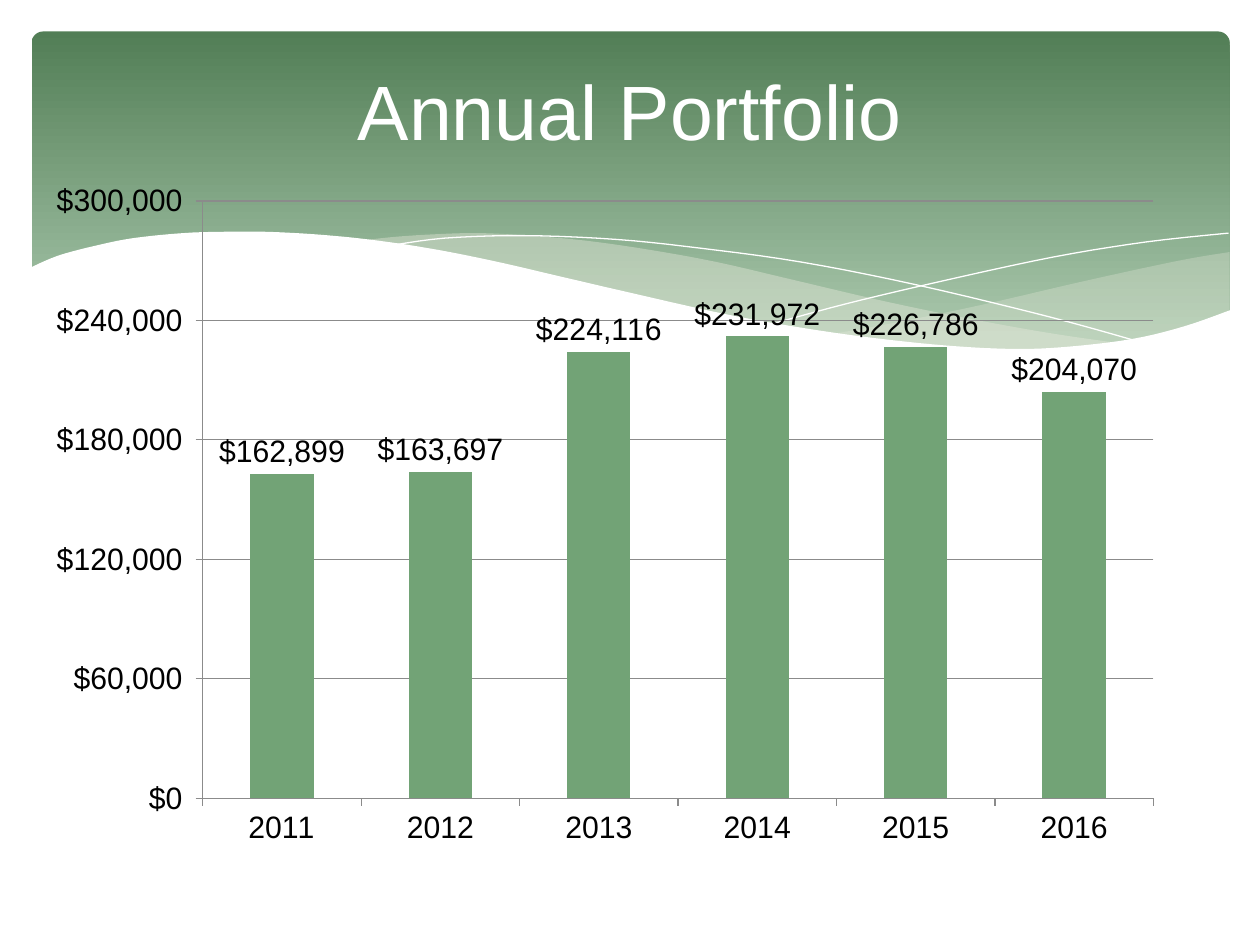
from dataclasses import dataclass, field

from lxml import etree
from pptx import Presentation
from pptx import util as u
from pptx.chart.data import CategoryChartData
from pptx.dml.color import RGBColor
from pptx.enum import chart as charts
from pptx.enum import shapes, text
from pptx.oxml.ns import qn

COLORS = {"white": "FFFFFF", "black": "000000", "dark": "527E56", "light": "AAC8AD",
          "mist": "EAEBDE", "bar": "72A376", "grid": "8B8B8B"}
PORTFOLIO = {"2011": 162899, "2012": 163697, "2013": 224116,
             "2014": 231972, "2015": 226786, "2016": 204070}

RIGHT_TOP = [(9.76, 2), (9.35, 2.07), (8.61, 2.23), (7.79, 2.42), (7.06, 2.57), (6.61, 2.65)]
RIGHT_BOTTOM = [(6.61, 2.65), (7.05, 2.71), (7.57, 2.76), (8.03, 2.78), (8.54, 2.76),
                (8.97, 2.7), (9.35, 2.62), (9.76, 2.47)]
MIDDLE_TOP = [(8.93, 2.73), (8.37, 2.65), (7.75, 2.54), (7.06, 2.4), (6.29, 2.22),
              (5.69, 2.08), (5.14, 1.98), (4.65, 1.91), (4.2, 1.87), (3.8, 1.85),
              (3.44, 1.86), (3.13, 1.88), (2.86, 1.91)]
MIDDLE_BOTTOM = [(2.86, 1.91), (3.42, 1.99), (4.04, 2.11), (4.91, 2.32), (5.66, 2.48),
                 (6.34, 2.61), (6.95, 2.7), (7.48, 2.76), (7.96, 2.78), (8.48, 2.77), (8.93, 2.73)]
FALLING_LINE = [(3.09, 1.95), (3.53, 1.89), (4.16, 1.87), (4.89, 1.9), (5.56, 1.97),
                (6.36, 2.08), (7.27, 2.26), (8.31, 2.51), (9.07, 2.72)]
RISING_LINE = [(6.13, 2.57), (6.72, 2.41), (7.48, 2.23), (8.36, 2.04), (9.1, 1.92), (9.75, 1.85)]
WHITE_EDGE = [(9.77, 2.46), (9.4, 2.59), (8.99, 2.69), (8.5, 2.75), (8.09, 2.77), (7.61, 2.75),
              (7.08, 2.7), (6.48, 2.62), (5.79, 2.5), (5.03, 2.33), (4.47, 2.2), (3.91, 2.07),
              (3.4, 1.97), (2.92, 1.9), (2.5, 1.86), (2.11, 1.84), (1.77, 1.84), (1.46, 1.85),
              (1.06, 1.89), (0.76, 1.95), (0.46, 2.03), (0.23, 2.13)]


def color(name):
    """Return the named colour."""
    return RGBColor.from_string(COLORS[name])


def smooth(knots, steps=5):
    """Return points on a Catmull-Rom curve through the knots."""
    padded = [knots[0], *knots, knots[-1]]
    points = [knots[0]]
    for a, b, c, d in zip(padded, padded[1:], padded[2:], padded[3:]):
        for step in range(1, steps + 1):
            t = step / steps
            points.append(tuple(
                (2 * q + (r - p) * t + (2 * p - 5 * q + 4 * r - s) * t ** 2
                 + (3 * q - p - 3 * r + s) * t ** 3) / 2
                for p, q, r, s in zip(a, b, c, d)))
    return points


@dataclass
class SlideBuilder:
    """Hold the style and the current slide."""
    page: object
    font: str = "Arial"
    sizes: dict = field(default_factory=lambda: {"title": 44, "chart": 18})

    def banner(self, left, top, width, height):
        """Add the rounded gradient banner."""
        box = self.page.shapes.add_shape(
            shapes.MSO_SHAPE.ROUNDED_RECTANGLE, *map(u.Inches, (left, top, width, height)))
        box.adjustments[0] = 0.034
        box.shadow.inherit = False
        box.line.fill.background()
        box.fill.gradient()
        box.fill.gradient_angle = 270
        for stop, name, position in zip(box.fill.gradient_stops, ("dark", "light"), (0, 0.9)):
            stop.color.rgb = color(name)
            stop.position = position

    def outline(self, points, close):
        """Add a freeform through points given in inches."""
        start, *rest = [(u.Inches(x), u.Inches(y)) for x, y in points]
        builder = self.page.shapes.build_freeform(*start)
        builder.add_line_segments(rest, close=close)
        shape = builder.convert_to_shape()
        shape.shadow.inherit = False
        return shape

    def wave(self, points, fill, opacity=100):
        """Add a filled wave."""
        shape = self.outline(points, True)
        shape.line.fill.background()
        shape.fill.solid()
        shape.fill.fore_color.rgb = color(fill)
        if opacity < 100:
            tint = shape.fill._xPr.find(".//" + qn("a:srgbClr"))
            etree.SubElement(tint, qn("a:alpha")).set("val", str(opacity * 1000))

    def curve(self, points):
        """Add a white hairline curve."""
        shape = self.outline(points, False)
        shape.fill.background()
        shape.line.color.rgb = color("white")
        shape.line.width = u.Pt(0)

    def title(self, words, left, top, width, height):
        """Add the centred slide title."""
        box = self.page.shapes.add_textbox(*map(u.Inches, (left, top, width, height)))
        frame = box.text_frame
        frame.word_wrap = True
        frame.vertical_anchor = text.MSO_ANCHOR.MIDDLE
        para = frame.paragraphs[0]
        para.alignment = text.PP_ALIGN.CENTER
        span = para.add_run()
        span.text = words
        self.style(span.font, "title", "white")

    def style(self, font, size, ink):
        """Apply the slide's typeface to a font."""
        font.name = self.font
        font.size = u.Pt(self.sizes[size])
        font.color.rgb = color(ink)

    def columns(self, name, values, left, top, width, height):
        """Add the column chart."""
        data = CategoryChartData()
        data.categories = list(values)
        data.add_series(name, list(values.values()))
        chart = self.page.shapes.add_chart(
            charts.XL_CHART_TYPE.COLUMN_CLUSTERED,
            *map(u.Inches, (left, top, width, height)), data).chart
        chart.has_title = False
        chart.has_legend = False
        self.style(chart.font, "chart", "black")
        plot = chart.plots[0]
        plot.gap_width = 150
        plot.vary_by_categories = False
        fill = plot.series[0].format.fill
        fill.solid()
        fill.fore_color.rgb = color("bar")

        plot.has_data_labels = True
        labels = plot.data_labels
        labels.show_value = True
        labels.position = charts.XL_LABEL_POSITION.OUTSIDE_END
        labels.number_format = '"$"#,##0'
        labels.number_format_is_linked = False
        self.style(labels.font, "chart", "black")

        scale = chart.value_axis
        scale.minimum_scale, scale.maximum_scale, scale.major_unit = 0, 300000, 60000
        scale.has_major_gridlines = True
        scale.tick_labels.number_format = '"$"#,##0" ";\\("$"#,##0\\)'
        scale.tick_labels.number_format_is_linked = False
        chart.category_axis.tick_label_position = charts.XL_TICK_LABEL_POSITION.LOW
        for axis in (scale, chart.category_axis):
            axis.major_tick_mark = charts.XL_TICK_MARK.OUTSIDE
            self.style(axis.tick_labels.font, "chart", "black")
        for part in (scale, chart.category_axis, scale.major_gridlines):
            part.format.line.color.rgb = color("grid")
            part.format.line.width = u.Pt(0.75)
        self.place_plot(chart, x=0.094, y=0.028, w=0.903, h=0.914)

    def place_plot(self, chart, **fractions):
        """Fix the inner plot area as fractions of the chart."""
        area = chart._chartSpace.find(".//" + qn("c:plotArea"))
        for old in area.findall(qn("c:layout")):
            area.remove(old)
        layout = etree.Element(qn("c:layout"))
        area.insert(0, layout)
        manual = etree.SubElement(layout, qn("c:manualLayout"))
        settings = {"layoutTarget": "inner", "xMode": "edge", "yMode": "edge", **fractions}
        for tag, value in settings.items():
            etree.SubElement(manual, qn("c:" + tag)).set("val", str(value))


def main():
    """Build and save the slide."""
    deck = Presentation()
    deck.slide_width, deck.slide_height = u.Inches(10), u.Inches(7.5)
    slide = SlideBuilder(deck.slides.add_slide(deck.slide_layouts[6]))
    slide.banner(0.25, 0.25, 9.51, 2.7)
    slide.wave(smooth(RIGHT_TOP) + smooth(RIGHT_BOTTOM), "mist", 29)
    slide.wave(smooth(MIDDLE_TOP) + smooth(MIDDLE_BOTTOM), "mist", 40)
    slide.curve(smooth(FALLING_LINE))
    slide.curve(smooth(RISING_LINE))
    slide.wave(smooth(WHITE_EDGE) + [(0.23, 3.29), (9.77, 3.29)], "white")
    slide.title("Annual Portfolio", 0.75, 0.33, 8.5, 1.08)
    slide.columns("Portfolio", PORTFOLIO, 0.45, 1.45, 8.73, 5.26)
    deck.save("out.pptx")


if __name__ == "__main__":
    main()
